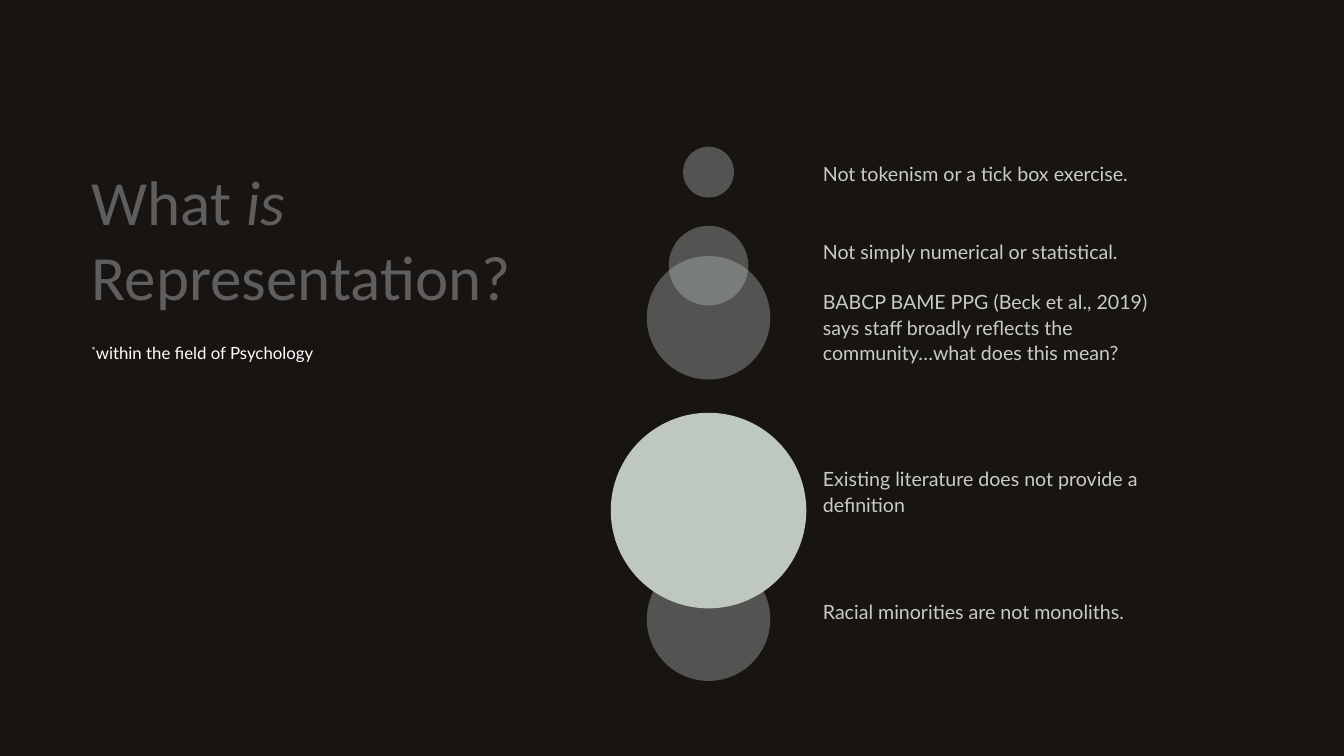
from lxml import etree
from pptx import Presentation
from pptx.dml.color import RGBColor
from pptx.enum.shapes import MSO_SHAPE as Shape
from pptx.enum.text import MSO_ANCHOR as Anchor, MSO_AUTO_SIZE as AutoSize, PP_ALIGN as Align
from pptx.oxml.ns import qn
from pptx.util import Inches, Pt

COLORS = {
    "background": "181412",
    "circle": "BEC8C1",
    "title": "5E5E5E",
    "note": "FFFFFF",
    "point": "C8CCC9",
}


def write_text(box, paragraphs, size, font, color, spacing=1.0):
    """Fill a box; each paragraph is a list of (text, italic, baseline percent)."""
    frame = box.text_frame
    frame.word_wrap = True
    frame.auto_size = AutoSize.NONE
    frame.vertical_anchor = Anchor.TOP
    frame.margin_left = frame.margin_right = Inches(0.08)
    frame.margin_top = frame.margin_bottom = Inches(0.08)
    for index, spans in enumerate(paragraphs):
        para = frame.paragraphs[0] if index == 0 else frame.add_paragraph()
        para.alignment = Align.LEFT
        para.line_spacing = spacing
        for text, italic, baseline in spans:
            span = para.add_run()
            span.text = text
            span.font.size = Pt(size)
            span.font.name = font
            span.font.italic = italic
            span.font.color.rgb = RGBColor.from_string(COLORS[color])
            if baseline:
                span._r.get_or_add_rPr().set("baseline", str(baseline * 1000))


deck = Presentation()
deck.slide_width = Inches(26.67)
deck.slide_height = Inches(15)
page = deck.slides.add_slide(deck.slide_layouts[5])
page.background.fill.solid()
page.background.fill.fore_color.rgb = RGBColor.from_string(COLORS["background"])

# Title
title = page.shapes.title
title.left, title.top = Inches(1.74), Inches(3.14)
title.width, title.height = Inches(11.11), Inches(3.46)
write_text(
    title,
    [[("What ", False, 0), ("is", True, 0)], [("Representation?", False, 0)]],
    size=90, font="Calibri", color="title",
)

# Note under the title
note = page.shapes.add_textbox(Inches(1.74), Inches(6.6), Inches(8.56), Inches(2.48))
write_text(
    note,
    [[("*", False, 30), ("within the field of Psychology", False, 0)]],
    size=24, font="Lato", color="note", spacing=1.3,
)

# Circles on one vertical axis: top, diameter, opacity in percent
AXIS = 14.06
circles = [
    (8.19, 3.88, 100),
    (11.06, 2.45, 36),
    (2.91, 1.01, 36),
    (4.48, 1.58, 36),
    (5.08, 2.45, 36),
]
for top, diameter, opacity in circles:
    circle = page.shapes.add_shape(
        Shape.OVAL, Inches(AXIS - diameter / 2), Inches(top), Inches(diameter), Inches(diameter)
    )
    circle.shadow.inherit = False
    circle.line.fill.background()
    circle.fill.solid()
    circle.fill.fore_color.rgb = RGBColor.from_string(COLORS["circle"])
    if opacity < 100:
        fill_color = circle._element.spPr.find(qn("a:solidFill"))[0]
        etree.SubElement(fill_color, qn("a:alpha"), val=str(opacity * 1000))

# Points beside the circles: top, height, text
points = [
    (3.09, 1.25, "Not tokenism or a tick box exercise."),
    (4.64, 1.25, "Not simply numerical or statistical."),
    (5.62, 1.88, "BABCP BAME PPG (Beck et al., 2019) says staff broadly reflects "
                 "the community…what does this mean?"),
    (9.14, 1.88, "Existing literature does not provide a definition"),
    (11.78, 1.88, "Racial minorities are not monoliths."),
]
for top, height, text in points:
    point = page.shapes.add_textbox(Inches(16.25), Inches(top), Inches(6.6), Inches(height))
    write_text(point, [[(text, False, 0)]], size=28, font="Lato", color="point", spacing=1.1)

deck.save("out.pptx")
